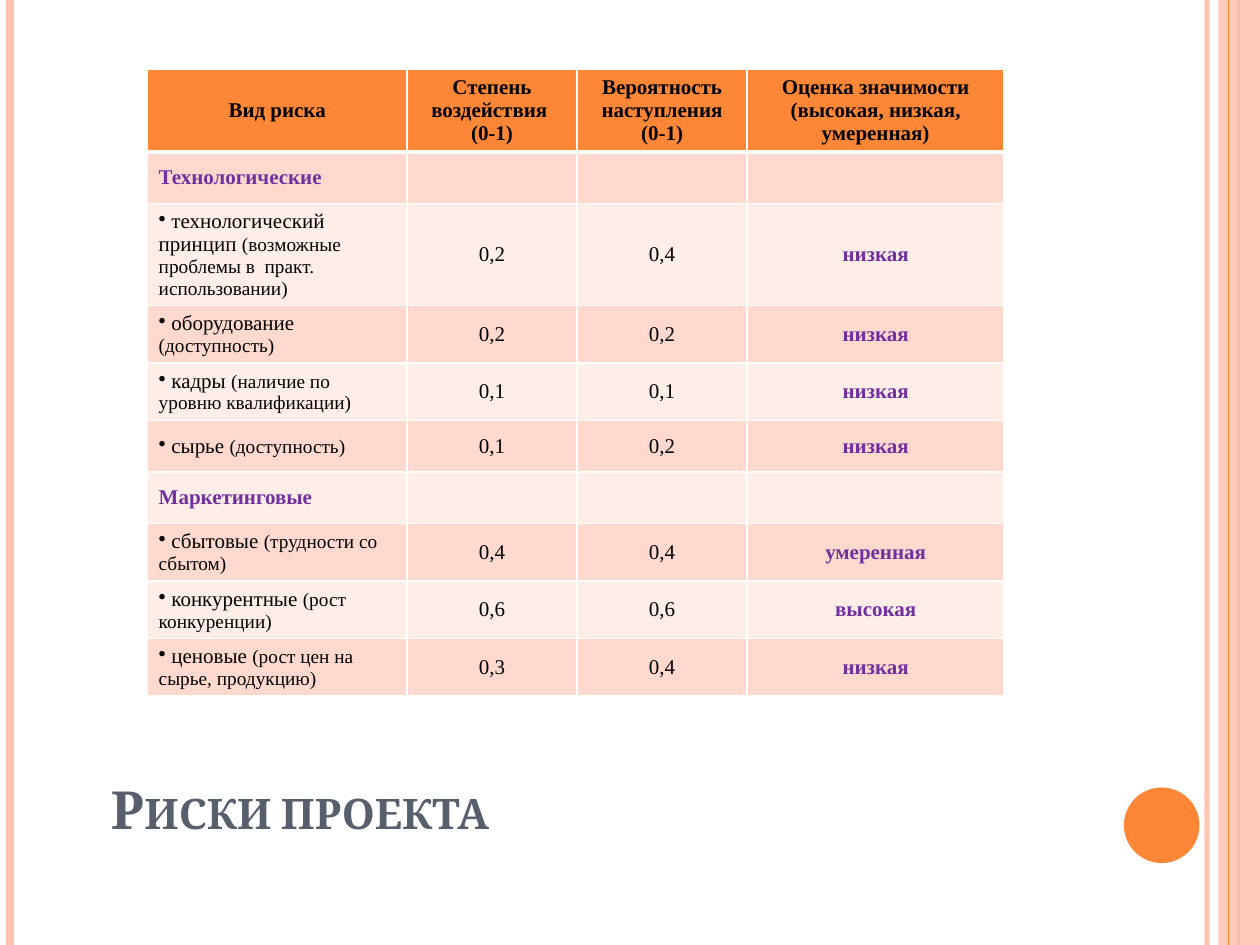
from lxml import etree
from pptx import Presentation
from pptx import util as u
from pptx.dml.color import RGBColor
from pptx.enum import shapes, text
from pptx.oxml import ns

COLORS = {
    "orange": "FE8637", "peach": "FEC3AE", "band_dark": "FFD9CE",
    "band_light": "FFEDE8", "title": "575F6D", "accent": "7030A0",
    "black": "000000", "white": "FFFFFF",
}
TABLE_FONT = "Times New Roman"
COL_WIDTHS = [2.06, 1.35, 1.35, 2.04]
ROW_HEIGHT = 0.41
HEADERS = [
    ["Вид риска"],
    ["Степень воздействия ", "(0-1)"],
    ["Вероятность наступления (0-1)"],
    ["Оценка значимости (высокая, низкая, умеренная)"],
]
# A row with one value is a group heading; others are
# (risk, explanation, impact, probability, significance).
RISKS = [
    ("Технологические",),
    ("технологический принцип", "(возможные проблемы в  практ. использовании)",
     "0,2", "0,4", "низкая"),
    ("оборудование", "(доступность)", "0,2", "0,2", "низкая"),
    ("кадры", "(наличие по уровню квалификации)", "0,1", "0,1", "низкая"),
    ("сырье", "(доступность)", "0,1", "0,2", "низкая"),
    ("Маркетинговые",),
    ("сбытовые", "(трудности со сбытом)", "0,4", "0,4", "умеренная"),
    ("конкурентные", "(рост конкуренции)", "0,6", "0,6", "высокая"),
    ("ценовые", "(рост цен на сырье, продукцию)", "0,3", "0,4", "низкая"),
]


def rgb(name):
    return RGBColor.from_string(COLORS[name])


def add_xml(parent, tag, **attrs):
    return etree.SubElement(parent, ns.qn(tag), attrs)


def set_alpha(fill_owner, percent):
    """Make every solid colour inside the element partly transparent."""
    for color in fill_owner.iter(ns.qn("a:srgbClr")):
        add_xml(color, "a:alpha", val=str(percent * 1000))


class SlideBuilder:
    def __init__(self, prs):
        self.s = prs.slides.add_slide(prs.slide_layouts[5])

    def run(self, p, content, color="black", font=TABLE_FONT, size=12, bold=False):
        r = p.add_run()
        r.text = content
        for name, value in {"name": font, "size": u.Pt(size), "bold": bold}.items():
            setattr(r.font, name, value)
        r.font.color.rgb = rgb(color)
        return r

    def title(self, content, left, top, width, height):
        sp = self.s.shapes.title
        box = {"left": left, "top": top, "width": width, "height": height}
        for name, value in box.items():
            setattr(sp, name, u.Inches(value))
        tf = sp.text_frame
        layout = {"vertical_anchor": text.MSO_ANCHOR.BOTTOM, "word_wrap": True,
                  "auto_size": text.MSO_AUTO_SIZE.NONE}
        for name, value in layout.items():
            setattr(tf, name, value)
        p = tf.paragraphs[0]
        p.alignment = text.PP_ALIGN.LEFT
        r = self.run(p, content, "title", "Cambria", 30, True)
        r.font._element.set("cap", "small")

    def vertical_line(self, x, color, width, alpha=None):
        line = self.s.shapes.add_connector(
            shapes.MSO_CONNECTOR.STRAIGHT,
            u.Inches(x), 0, u.Inches(x), u.Inches(7.5))
        line.line.color.rgb = rgb(color)
        line.line.width = u.Pt(width)
        sp_pr = line._element.spPr
        if alpha:
            set_alpha(sp_pr, alpha)
        add_xml(sp_pr, "a:effectLst")

    def shape(self, kind, left, top, width, height, color, alpha=None):
        sp = self.s.shapes.add_shape(
            kind, *(u.Inches(v) for v in (left, top, width, height)))
        sp.shadow.inherit = False
        sp.fill.solid()
        sp.fill.fore_color.rgb = rgb(color)
        sp.line.fill.background()
        if alpha:
            set_alpha(sp._element.spPr, alpha)

    def style_cell(self, cell, fill, top=1, bottom=1):
        cell.vertical_anchor = text.MSO_ANCHOR.MIDDLE
        margins = {"left": 0.09, "right": 0.09, "top": 0.05, "bottom": 0.05}
        for side, value in margins.items():
            setattr(cell, f"margin_{side}", u.Inches(value))
        tc_pr = cell._tc.get_or_add_tcPr()
        for side, width in {"L": 1, "R": 1, "T": top, "B": bottom}.items():
            ln = add_xml(tc_pr, f"a:ln{side}", w=str(u.Pt(width)))
            add_xml(add_xml(ln, "a:solidFill"), "a:srgbClr", val=COLORS["white"])
        cell.fill.solid()
        cell.fill.fore_color.rgb = rgb(fill)

    def centred(self, cell, lines, **style):
        tf = cell.text_frame
        for i, line in enumerate(lines):
            p = tf.add_paragraph() if i else tf.paragraphs[0]
            p.alignment = text.PP_ALIGN.CENTER
            self.run(p, line, **style)

    def risk_row(self, cells, values):
        p = cells[0].text_frame.paragraphs[0]
        if len(values) == 1:
            self.run(p, values[0], "accent", bold=True)
            return
        risk, explanation, impact, probability, significance = values
        add_xml(p._p.get_or_add_pPr(), "a:buChar", char="•")
        self.run(p, f" {risk} ")
        self.run(p, explanation, size=11)
        self.centred(cells[1], [impact])
        self.centred(cells[2], [probability])
        self.centred(cells[3], [significance], color="accent", bold=True)

    def risk_table(self, left, top, width, height):
        frame = self.s.shapes.add_table(
            len(RISKS) + 1, len(COL_WIDTHS),
            *(u.Inches(v) for v in (left, top, width, height)))
        table = frame.table
        table.horz_banding = False
        for column, col_width in zip(table.columns, COL_WIDTHS):
            column.width = u.Inches(col_width)
        for row in table.rows:
            row.height = u.Inches(ROW_HEIGHT)
        frame.height = u.Inches(height)

        for cell, lines in zip(table.rows[0].cells, HEADERS):
            self.style_cell(cell, "orange", bottom=3)
            self.centred(cell, lines, bold=True)
        for i, values in enumerate(RISKS):
            cells = list(table.rows[i + 1].cells)
            for cell in cells:
                self.style_cell(cell, "band_light" if i % 2 else "band_dark",
                                top=1 if i else 3)
            self.risk_row(cells, values)


def main():
    prs = Presentation()
    prs.slide_width, prs.slide_height = u.Inches(10), u.Inches(7.5)
    slide = SlideBuilder(prs)
    slide.vertical_line(9.58, "peach", 3, alpha=93)
    slide.vertical_line(0.08, "peach", 4.5)
    slide.vertical_line(9.83, "orange", 1.5)
    slide.shape(shapes.MSO_SHAPE.RECTANGLE, 9.67, 0, 0.33, 7.5, "peach", alpha=87)
    slide.vertical_line(9.75, "orange", 0.75)
    slide.shape(shapes.MSO_SHAPE.OVAL, 8.92, 6.25, 0.6, 0.6, "orange")
    slide.title("Риски проекта", 0.78, 6.02, 7.27, 0.7)
    slide.risk_table(1.17, 0.55, 6.81, 5.2)
    prs.save("out.pptx")


if __name__ == "__main__":
    main()
